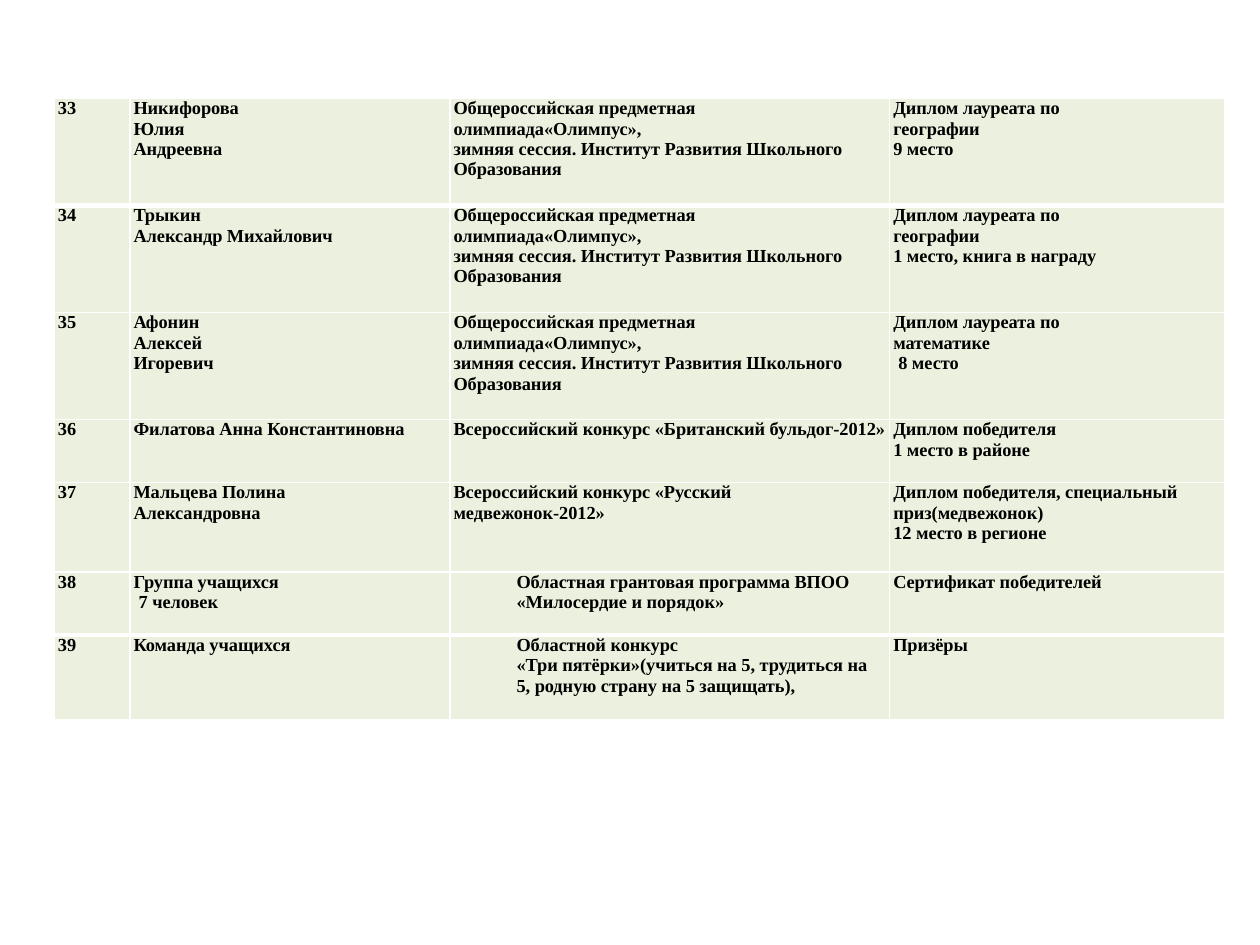
import pptx
import pptx.dml.color
import pptx.oxml
import pptx.oxml.ns
import pptx.util

BLACK = pptx.dml.color.RGBColor(0x00, 0x00, 0x00)
WHITE = pptx.dml.color.RGBColor(0xFF, 0xFF, 0xFF)
PALE_GREEN = pptx.dml.color.RGBColor(0xEB, 0xF1, 0xDE)

UNIT = pptx.util.Inches(0.1)
GRID_COLUMNS, GRID_ROWS = 100, 75
SPACE_INDENT, DEEP_INDENT = 0.4, 5

OLYMPIAD = [
    "Общероссийская предметная олимпиада«Олимпус»,",
    "зимняя сессия. Институт Развития Школьного Образования",
]
FIRST_NUMBER = 33
AWARDS = [
    (["Никифорова", "Юлия", "Андреевна"], OLYMPIAD,
     ["Диплом лауреата по", "географии", "9 место"]),
    (["Трыкин", "Александр Михайлович"], OLYMPIAD,
     ["Диплом лауреата по", "географии", "1 место, книга в награду"]),
    (["Афонин", "Алексей", "Игоревич"], OLYMPIAD,
     ["Диплом лауреата по", "математике", ("8 место", SPACE_INDENT)]),
    (["Филатова Анна Константиновна"],
     ["Всероссийский конкурс «Британский бульдог-2012»"],
     ["Диплом победителя", "1 место в районе"]),
    (["Мальцева Полина", "Александровна"],
     ["Всероссийский конкурс «Русский медвежонок-2012»"],
     ["Диплом победителя, специальный приз(медвежонок)", "12 место в регионе"]),
    (["Группа учащихся", ("7 человек", SPACE_INDENT)],
     [("Областная грантовая программа ВПОО «Милосердие и порядок»", DEEP_INDENT)],
     ["Сертификат победителей"]),
    (["Команда учащихся"],
     [("Областной конкурс", DEEP_INDENT),
      ("«Три пятёрки»(учиться на 5, трудиться на 5, родную страну на 5 защищать),",
       DEEP_INDENT)],
     ["Призёры"]),
]
COLUMN_WIDTHS = [6, 25.4, 34.9, 26.6]
ROW_HEIGHTS = [8.5, 8.5, 8.5, 5, 7.1, 5, 6.7]
THICK_RULES = {1, 6}


def grid(count):
    """Convert a number of grid units to a length."""
    return pptx.util.Emu(round(count * UNIT))


class SlideBuilder:
    """Holds the text style and the current slide."""

    font_format = {"name": "Times New Roman", "size": pptx.util.Pt(10.5), "bold": True}
    cell_format = {
        "margin_left": pptx.util.Inches(0.03),
        "margin_right": pptx.util.Inches(0.03),
        "margin_top": 0,
        "margin_bottom": 0,
    }

    def __init__(self, presentation):
        """Add a blank slide to the presentation."""
        self.slide = presentation.slides.add_slide(presentation.slide_layouts[6])

    def table(self, left, top, widths, heights, rows, thick_rules):
        """Add a table whose lengths are given in grid units."""
        shape = self.slide.shapes.add_table(
            len(heights), len(widths), grid(left), grid(top),
            grid(sum(widths)), grid(sum(heights)))
        table = shape.table
        table.first_row = table.horz_banding = False
        for column, width in zip(table.columns, widths):
            column.width = grid(width)
        for row, height in zip(table.rows, heights):
            row.height = grid(height)
        for row_index, row in enumerate(rows):
            top_width, bottom_width = (
                3 if rule in thick_rules else 1 for rule in (row_index, row_index + 1))
            for column_index, lines in enumerate(row):
                cell = table.cell(row_index, column_index)
                self.borders(cell, {"L": 1, "R": 1, "T": top_width, "B": bottom_width})
                self.cell(cell, lines)

    def cell(self, cell, lines):
        """Fill a cell with one paragraph per line."""
        for name, value in self.cell_format.items():
            setattr(cell, name, value)
        cell.fill.solid()
        cell.fill.fore_color.rgb = PALE_GREEN
        for index, line in enumerate(lines):
            text, indent = (line, 0) if isinstance(line, str) else line
            frame = cell.text_frame
            paragraph = frame.add_paragraph() if index else frame.paragraphs[0]
            self.paragraph(paragraph, text, indent)

    def paragraph(self, paragraph, text, indent):
        """Write styled text with a left indent in grid units."""
        if indent:
            properties = paragraph._p.get_or_add_pPr()
            properties.set("marL", str(grid(indent)))
            properties.set("indent", "0")
        run = paragraph.add_run()
        run.text = text
        for name, value in self.font_format.items():
            setattr(run.font, name, value)
        run.font.color.rgb = BLACK

    def borders(self, cell, widths):
        """Draw white cell borders with widths in points by side."""
        properties = cell._tc.get_or_add_tcPr()
        for side, width in widths.items():
            properties.append(pptx.oxml.parse_xml(
                f'<a:ln{side} {pptx.oxml.ns.nsdecls("a")} w="{pptx.util.Pt(width)}">'
                f'<a:solidFill><a:srgbClr val="{WHITE}"/></a:solidFill></a:ln{side}>'))


def main():
    """Build the slide with the table of awards."""
    presentation = pptx.Presentation()
    presentation.slide_width = grid(GRID_COLUMNS)
    presentation.slide_height = grid(GRID_ROWS)
    rows = [([str(number)], *award) for number, award in enumerate(AWARDS, FIRST_NUMBER)]
    builder = SlideBuilder(presentation)
    builder.table(4.3, 7.8, COLUMN_WIDTHS, ROW_HEIGHTS, rows, THICK_RULES)
    presentation.save("out.pptx")


if __name__ == "__main__":
    main()
